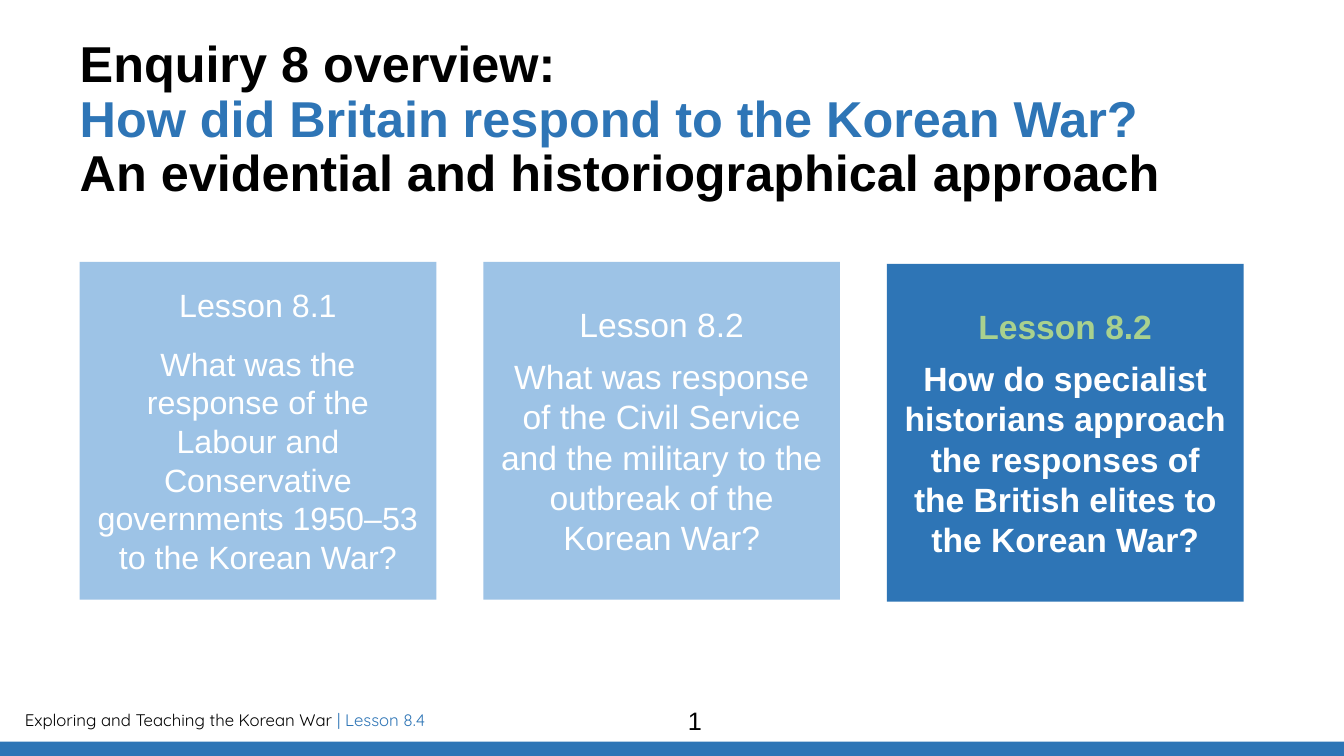
from pptx import Presentation
from pptx.dml.color import RGBColor as RGB
from pptx.enum.shapes import MSO_SHAPE as Shape
from pptx.enum.text import MSO_ANCHOR as Anchor, PP_ALIGN as Align
from pptx.util import Cm, Pt

COLORS = {"black": "000000", "white": "FFFFFF", "blue": "2E75B6",
          "pale": "9DC3E6", "green": "A9D18E"}


def paint(font, color, size=None, bold=None, name="Arial"):
    font.color.rgb = RGB.from_string(COLORS[color])
    if size:
        font.size, font.bold, font.name = Pt(size), bold, name


def block(left, top, width, height, color):
    rect = slide.shapes.add_shape(Shape.RECTANGLE, Cm(left), Cm(top), Cm(width), Cm(height))
    rect.shadow.inherit = False
    rect.fill.solid()
    rect.fill.fore_color.rgb = RGB.from_string(COLORS[color])
    rect.line.fill.background()
    return rect.text_frame


deck = Presentation()
deck.slide_width, deck.slide_height = Cm(33.87), Cm(19.05)
slide = deck.slides.add_slide(deck.slide_layouts[6])

footer = slide.shapes.add_textbox(Cm(0.38), Cm(17.75), Cm(19.86), Cm(0.76)).text_frame
footer.word_wrap = True
para = footer.paragraphs[0]
paint(para.font, "black", 12, name="Quicksand")
for text, color in [("Exploring and Teaching the Korean War ", "black"),
                    ("| Lesson 8.4", "blue")]:
    run = para.add_run()
    run.text = text
    paint(run.font, color)

block(0, 18.69, 33.87, 0.36, "blue")

title = slide.shapes.add_textbox(Cm(2.01), Cm(0.99), Cm(31.42), Cm(3.68)).text_frame
title.word_wrap = True
title.margin_left = title.margin_right = title.margin_top = title.margin_bottom = 0
para = title.paragraphs[0]
para.line_spacing = 0.9
paint(para.font, "black", 36, True)
heads = [("Enquiry 8 overview:", "black"),
         ("How did Britain respond to the Korean War?", "blue"),
         ("An evidential and historiographical approach", "black")]
for i, (text, color) in enumerate(heads):
    if i:
        para.add_line_break()
    run = para.add_run()
    run.text = text
    paint(run.font, color)

number = slide.shapes.add_textbox(Cm(11.07), Cm(17.65), Cm(12.88), Cm(1.02)).text_frame
number.word_wrap = True
para = number.paragraphs[0]
para.text = "1"
para.alignment = Align.CENTER
paint(para.font, "black", 18)

lessons = [
    ("Lesson 8.1", "What was the response of the Labour and Conservative "
     "governments 1950–53 to the Korean War?", 6.6, 23, 6, "pale", "white", False),
    ("Lesson 8.2", "What was response of the Civil Service and the military "
     "to the outbreak of the Korean War?", 6.6, 24, 0, "pale", "white", False),
    ("Lesson 8.2", "How do specialist historians approach the responses of the "
     "British elites to the Korean War?", 6.65, 24, 0, "blue", "green", True)]
for i, (label, text, top, size, gap, fill, color, bold) in enumerate(lessons):
    card = block(2.01 + 10.17 * i, top, 8.99, 8.51, fill)
    card.word_wrap = True
    card.vertical_anchor = Anchor.MIDDLE
    card.margin_left = card.margin_right = card.margin_top = card.margin_bottom = Cm(0.36)
    head, body = card.paragraphs[0], card.add_paragraph()
    head.text, body.text = label, text
    head.space_after = Pt(0.35 * size)
    body.space_before = Pt(gap)
    for para, tone in [(head, color), (body, "white")]:
        para.alignment = Align.CENTER
        paint(para.font, tone, size, bold)

deck.save("out.pptx")
